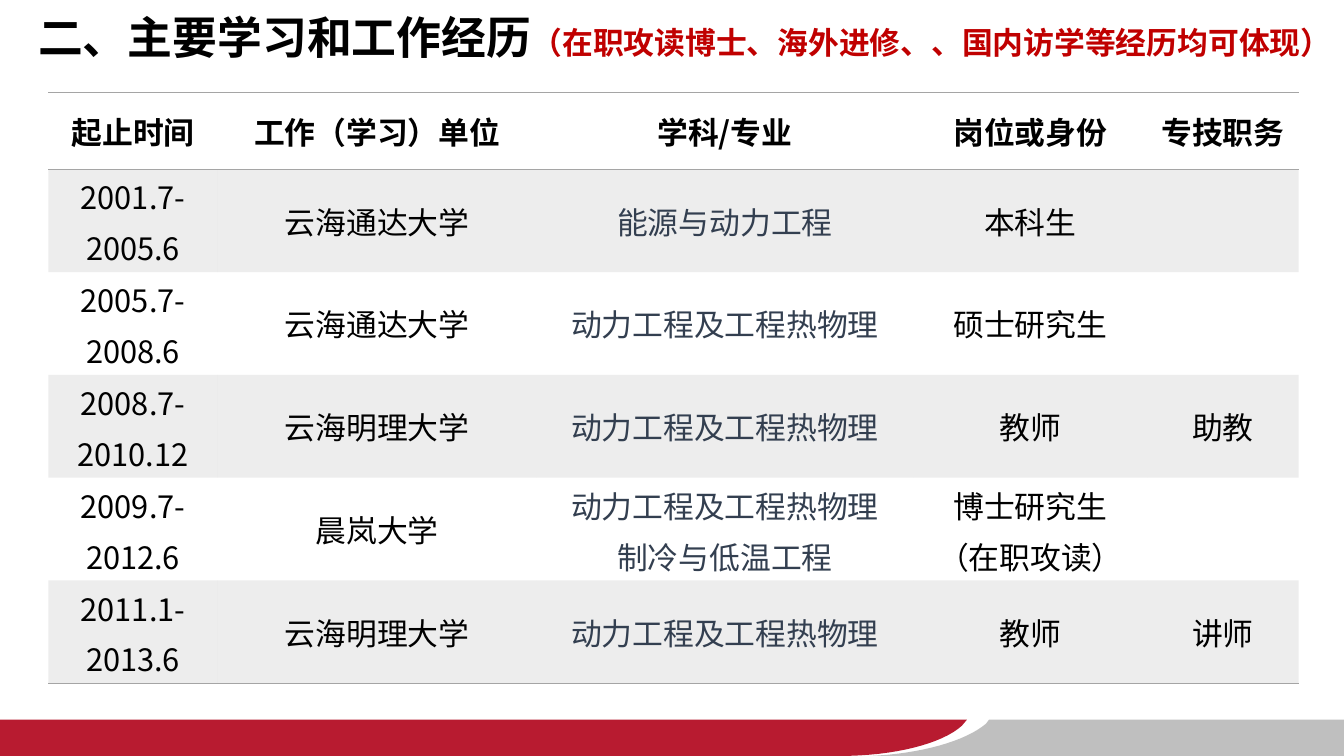
"""Builds a slide with a table of study and work experience."""
from lxml import etree
from pptx import Presentation
from pptx.dml.color import RGBColor
from pptx.enum.text import MSO_ANCHOR, PP_ALIGN
from pptx.oxml.ns import qn
from pptx.util import Inches, Pt

MIDDLE, CENTER = MSO_ANCHOR.MIDDLE, PP_ALIGN.CENTER
THEME = {
    "font": "Noto Sans CJK SC",
    "text": "000000", "subject": "333F50", "note": "C00000",
    "rule": "A5A5A5", "red": "B81B30", "grey": "BFBFBF",
    "title_size": 32, "body_size": 22,
}
NO_TABLE_STYLE = "{2D5ABB26-0587-4C30-8999-92F81FD0307C}"
SLIDE_W, SLIDE_H = 13.33, 7.5
BAND_TOP = 7.14


def add_run(paragraph, text, size, color, bold):
    run = paragraph.add_run()
    run.text = text
    for name, value in {"size": Pt(size), "bold": bold, "name": THEME["font"]}.items():
        setattr(run.font, name, value)
    run.font.color.rgb = RGBColor.from_string(color)
    etree.SubElement(run.font._element, qn("a:ea"), typeface=THEME["font"])


def curve(start, pull_a, pull_b, end, steps=16):
    points = []
    for step in range(steps + 1):
        t = step / steps
        weights = ((1 - t) ** 3, 3 * t * (1 - t) ** 2, 3 * t ** 2 * (1 - t), t ** 3)
        points.append(tuple(
            sum(w * p[axis] for w, p in zip(weights, (start, pull_a, pull_b, end)))
            for axis in (0, 1)))
    return points


deck = Presentation()
deck.slide_width, deck.slide_height = Inches(SLIDE_W), Inches(SLIDE_H)
slide = deck.slides.add_slide(deck.slide_layouts[6])

red_edge = curve((9.54, 7.2), (9.34, 7.38), (8.87, SLIDE_H), (8.33, SLIDE_H))
grey_edge = curve((8.62, SLIDE_H), (9.14, 7.48), (9.58, 7.35), (9.78, 7.18))
footer_bands = [
    ("red", [(0, BAND_TOP), (9.59, BAND_TOP), *red_edge, (0, SLIDE_H)]),
    ("grey", [(9.81, BAND_TOP), (SLIDE_W, BAND_TOP), (SLIDE_W, SLIDE_H),
              (8.56, SLIDE_H), *grey_edge]),
]
for color, outline in footer_bands:
    corners = [(Inches(x), Inches(y)) for x, y in outline]
    builder = slide.shapes.build_freeform(*corners[0], scale=1.0)
    builder.add_line_segments(corners[1:], close=True)
    band = builder.convert_to_shape()
    band.shadow.inherit = False
    band.fill.solid()
    band.fill.fore_color.rgb = RGBColor.from_string(THEME[color])
    band.line.fill.background()

title = slide.shapes.add_textbox(
    Inches(0.28), Inches(0.05), Inches(13.61), Inches(0.94)).text_frame
title.word_wrap = True
add_run(title.paragraphs[0], "二、主要学习和工作经历", THEME["title_size"], THEME["text"], True)
add_run(title.paragraphs[0], "（在职攻读博士、海外进修、、国内访学等经历均可体现）",
        THEME["body_size"], THEME["note"], True)

experience = [
    ("起止时间", "工作（学习）单位", "学科/专业", "岗位或身份", "专技职务"),
    ("2001.7-\n2005.6", "云海通达大学", "能源与动力工程", "本科生", ""),
    ("2005.7-\n2008.6", "云海通达大学", "动力工程及工程热物理", "硕士研究生", ""),
    ("2008.7-\n2010.12", "云海明理大学", "动力工程及工程热物理", "教师", "助教"),
    ("2009.7-\n2012.6", "晨岚大学", "动力工程及工程热物理\n制冷与低温工程",
     "博士研究生\n（在职攻读）", ""),
    ("2011.1-\n2013.6", "云海明理大学", "动力工程及工程热物理", "教师", "讲师"),
]
column_widths = [1.68, 3.16, 3.74, 2.32, 1.5]
header_height, row_height = 0.76, 1.02
last_row = len(experience) - 1
SUBJECT_COLUMN = 2

table_frame = slide.shapes.add_table(
    len(experience), len(column_widths), Inches(0.48), Inches(0.92),
    Inches(sum(column_widths)), Inches(header_height + last_row * row_height))
table = table_frame.table
table.first_row = table.horz_banding = False
table._tbl.tblPr.find(qn("a:tableStyleId")).text = NO_TABLE_STYLE
for column, width in zip(table.columns, column_widths):
    column.width = Inches(width)

for r, entries in enumerate(experience):
    is_header = r == 0
    table.rows[r].height = Inches(header_height if is_header else row_height)
    rules = ["a:lnT", "a:lnB"] if is_header else ["a:lnB"] if r == last_row else []
    for c, entry in enumerate(entries):
        cell = table.cell(r, c)
        cell.vertical_anchor = MIDDLE
        color = THEME["subject" if c == SUBJECT_COLUMN and not is_header else "text"]
        cell_props = cell._tc.get_or_add_tcPr()
        for tag in rules:
            rule = etree.SubElement(cell_props, qn(tag), w=str(Pt(1)))
            paint = etree.SubElement(rule, qn("a:solidFill"))
            etree.SubElement(paint, qn("a:srgbClr"), val=THEME["rule"])
        if r % 2:
            cell.fill.solid()
            cell.fill.fore_color.rgb = RGBColor.from_string(THEME["rule"])
            tint = cell_props.find(qn("a:solidFill")).find(qn("a:srgbClr"))
            etree.SubElement(tint, qn("a:alpha"), val="20000")
        else:
            cell.fill.background()
        for i, line in enumerate(entry.split("\n") if entry else []):
            frame = cell.text_frame
            paragraph = frame.add_paragraph() if i else frame.paragraphs[0]
            paragraph.alignment = CENTER
            gap = etree.SubElement(paragraph._p.get_or_add_pPr(), qn("a:spcBef"))
            etree.SubElement(gap, qn("a:spcPct"), val="20000")
            add_run(paragraph, line, THEME["body_size"], color, is_header)

deck.save("out.pptx")
